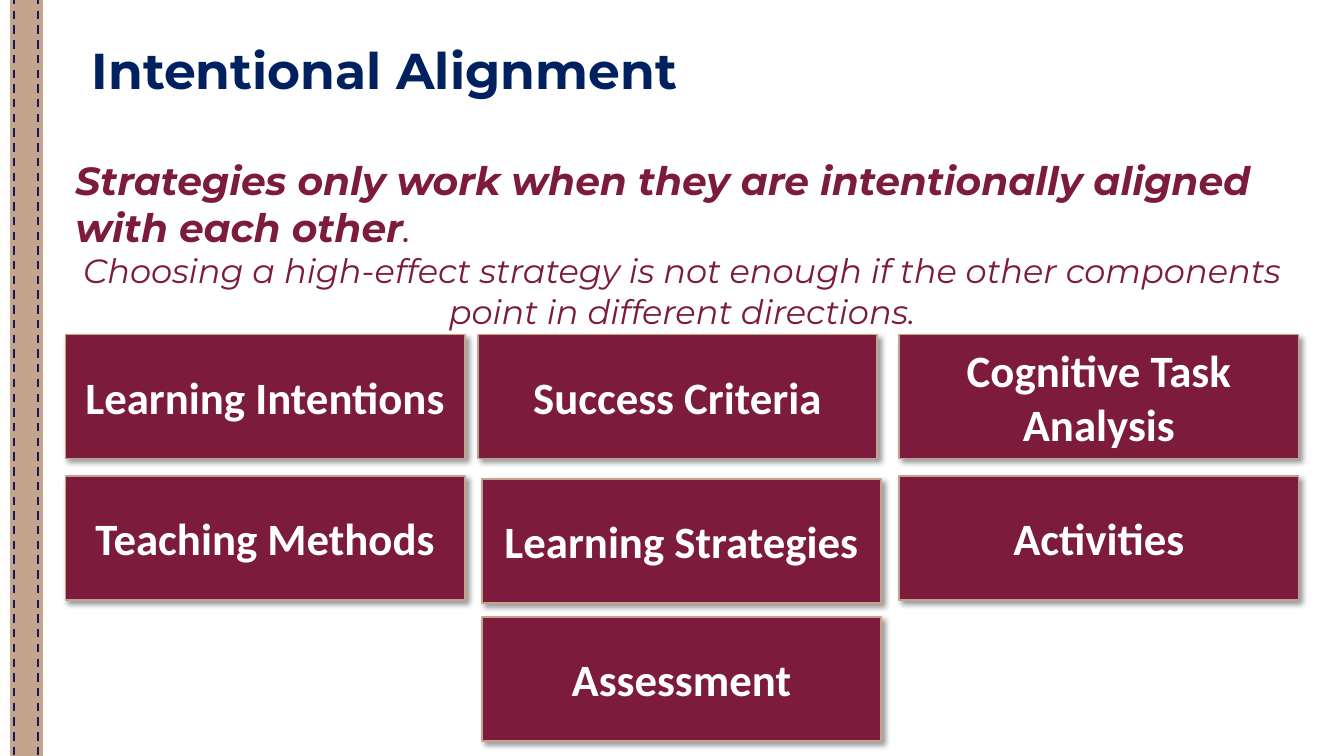
from lxml import etree
from pptx import Presentation
from pptx import util as u
from pptx.dml.color import RGBColor
from pptx.enum import dml, shapes, text
from pptx.oxml import ns, parse_xml


def color(value):
    return RGBColor.from_string(value)


def add_run(p, words, fmt, font_color):
    r = p.add_run()
    r.text = words
    for name, value in fmt.items():
        setattr(r.font, name, value)
    r.font.color.rgb = color(font_color)


NAVY, STITCH, MAROON, TAN, WHITE = "002060", "15195D", "7C1B3C", "C3A48C", "FFFFFF"

prs = Presentation()
prs.slide_width, prs.slide_height = u.Inches(13.33), u.Inches(7.5)
s = prs.slides.add_slide(prs.slide_layouts[5])

band = s.shapes.add_shape(
    shapes.MSO_SHAPE.RECTANGLE, u.Inches(0.1), u.Inches(-0.01), u.Inches(0.32), u.Inches(7.51)
)
band.shadow.inherit = False
band.fill.solid()
band.fill.fore_color.rgb = color(TAN)
band.line.color.rgb = color(TAN)
band.line.width = u.Pt(0.75)

for x in (0.14, 0.38):
    stitch = s.shapes.add_connector(
        shapes.MSO_CONNECTOR.STRAIGHT, u.Inches(x), u.Inches(-0.04), u.Inches(x), u.Inches(7.53)
    )
    stitch.line.color.rgb = color(STITCH)
    stitch.line.width = u.Pt(1.5)
    stitch.line.dash_style = dml.MSO_LINE.DASH
    etree.SubElement(stitch.element.spPr, ns.qn("a:effectLst"))

title = s.shapes.title
title.left, title.top = u.Inches(0.81), u.Inches(0.41)
title.width, title.height = u.Inches(11.64), u.Inches(0.81)
tf = title.text_frame
tf.word_wrap = True
tf.auto_size = text.MSO_AUTO_SIZE.NONE
tf.vertical_anchor = text.MSO_ANCHOR.TOP
p = tf.paragraphs[0]
p.alignment = text.PP_ALIGN.LEFT
p.line_spacing = 0.9
add_run(p, "Intentional Alignment", {"name": "Montserrat", "size": u.Pt(36), "bold": True}, NAVY)

cards = [
    ("Learning Intentions", 0.65, 3.32),
    ("Success Criteria", 4.74, 3.32),
    ("Cognitive Task Analysis", 8.92, 3.32),
    ("Teaching Methods", 0.65, 4.72),
    ("Learning Strategies", 4.78, 4.75),
    ("Activities", 8.92, 4.72),
    ("Assessment", 4.78, 6.12),
]
card_font = {"name": "Calibri", "size": u.Pt(32), "bold": True}
shadow_xml = (
    f'<a:outerShdw {ns.nsdecls("a")} blurRad="{u.Pt(4)}" dist="{u.Pt(3)}" dir="2700000" '
    'algn="tl" rotWithShape="0"><a:srgbClr val="000000"><a:alpha val="40000"/>'
    "</a:srgbClr></a:outerShdw>"
)
for label, x, y in cards:
    sp = s.shapes.add_shape(
        shapes.MSO_SHAPE.RECTANGLE, u.Inches(x), u.Inches(y), u.Inches(3.96), u.Inches(1.23)
    )
    sp.fill.solid()
    sp.fill.fore_color.rgb = color(MAROON)
    sp.line.color.rgb = color(TAN)
    sp.line.width = u.Pt(1.25)
    sp.shadow.inherit = False
    sp.element.spPr.find(ns.qn("a:effectLst")).append(parse_xml(shadow_xml))
    tf = sp.text_frame
    tf.word_wrap = True
    tf.vertical_anchor = text.MSO_ANCHOR.MIDDLE
    for side in ("left", "top", "right", "bottom"):
        setattr(tf, f"margin_{side}", 0)
    p = tf.paragraphs[0]
    p.alignment = text.PP_ALIGN.CENTER
    add_run(p, label, card_font, WHITE)

message = s.shapes.add_textbox(u.Inches(0.65), u.Inches(1.5), u.Inches(12.23), u.Inches(1.85))
tf = message.text_frame
tf.word_wrap = True
tf.auto_size = text.MSO_AUTO_SIZE.SHAPE_TO_FIT_TEXT
lead = {"name": "Montserrat", "size": u.Pt(28), "italic": True, "bold": True}
p = tf.paragraphs[0]
add_run(p, "Strategies only work when they are intentionally aligned with each other", lead, MAROON)
add_run(p, ".", {**lead, "bold": False}, MAROON)
p = tf.add_paragraph()
p.alignment = text.PP_ALIGN.CENTER
add_run(
    p,
    "Choosing a high-effect strategy is not enough if the other components "
    "point in different directions.",
    {**lead, "size": u.Pt(24), "bold": False},
    MAROON,
)

prs.save("out.pptx")
